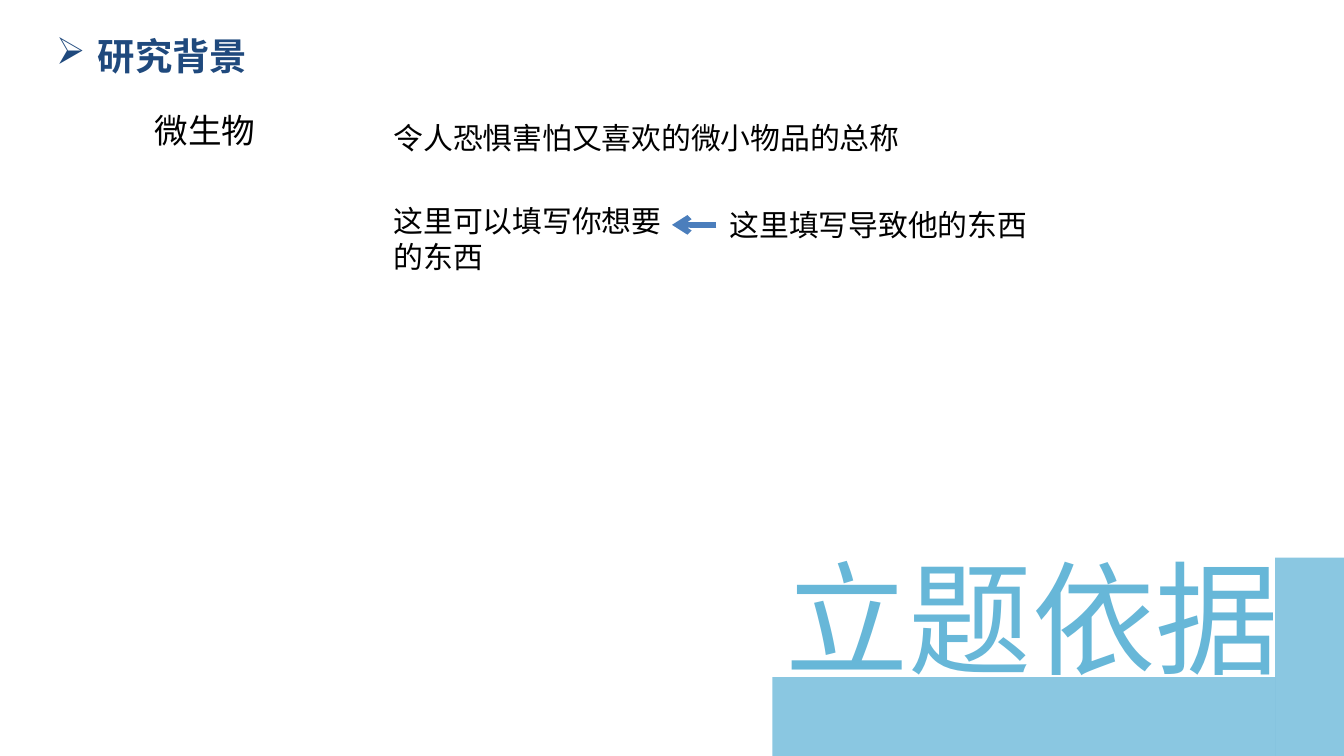
"""Build the research background slide with its corner title."""
from lxml import etree
from pptx import Presentation
from pptx.dml.color import RGBColor
from pptx.enum.shapes import MSO_CONNECTOR, MSO_SHAPE
from pptx.enum.text import MSO_AUTO_SIZE
from pptx.oxml.ns import qn
from pptx.util import Cm, Pt

RECTANGLE = MSO_SHAPE.RECTANGLE
STRAIGHT = MSO_CONNECTOR.STRAIGHT
GROW = MSO_AUTO_SIZE.SHAPE_TO_FIT_TEXT

SKY = RGBColor(0x67, 0xB7, 0xD8)
NAVY = RGBColor(0x1F, 0x49, 0x7D)
BLUE = RGBColor(0x4B, 0x7E, 0xBC)
BLACK = RGBColor(0, 0, 0)
FONT = "Noto Sans CJK SC"

WIDTH, HEIGHT = 25.4, 14.29
BAND_LEFT, BAND_TOP = 14.6, 12.8
COLUMN_LEFT, COLUMN_TOP, COLUMN_WIDTH = 24.1, 10.54, 3.4
BANDS_BOTTOM = 14.35
DETAIL_LEFT, CAUSE_LEFT = 7.19, 13.54
CAUSE_TOP, LINE_HEIGHT = 3.78, 0.94
ARROW_LENGTH = 0.84

BANDS = [
    (COLUMN_LEFT, COLUMN_TOP, COLUMN_WIDTH),
    (BAND_LEFT, BAND_TOP, COLUMN_LEFT - BAND_LEFT),
]
TEXTS = [
    ("立题依据", (BAND_LEFT, 10.13, 11.4, 3.05), dict(size=66, color=SKY)),
    ("研究背景", (0.81, 0.51, 6.4, 1.09),
     dict(size=20, color=NAVY, bold=True, bullet="➢")),
    ("令人恐惧害怕又喜欢的微小物品的总称",
     (DETAIL_LEFT, 2.13, 16.2, LINE_HEIGHT), {}),
    ("微生物", (2.67, 1.96, 2.41, 1.02), dict(size=18, wrap=False)),
    ("这里可以填写你想要的东西", (DETAIL_LEFT, 3.71, 5.92, 1.6), {}),
    ("这里填写导致他的东西",
     (CAUSE_LEFT, CAUSE_TOP, 6.15, LINE_HEIGHT), dict(wrap=False)),
]


def add_child(parent, tag, **attributes):
    return etree.SubElement(parent, qn(tag), attributes)


def add_text(slide, text, box, size=16, color=BLACK, bold=False, wrap=True, bullet=None):
    frame = slide.shapes.add_textbox(*map(Cm, box)).text_frame
    frame.word_wrap = wrap
    frame.auto_size = GROW
    paragraph = frame.paragraphs[0]
    if bullet:
        properties = paragraph._p.get_or_add_pPr()
        properties.set("marL", str(Cm(0.79)))
        properties.set("indent", str(Cm(-0.79)))
        add_child(properties, "a:buChar", char=bullet)
    run = paragraph.add_run()
    run.text = text
    run.font.size = Pt(size)
    run.font.bold = bold
    run.font.color.rgb = color
    run.font.name = FONT
    add_child(run._r.get_or_add_rPr(), "a:ea", typeface=FONT)


def add_band(slide, left, top, width):
    box = (left, top, width, BANDS_BOTTOM - top)
    band = slide.shapes.add_shape(RECTANGLE, *map(Cm, box))
    band.shadow.inherit = False
    band.fill.solid()
    band.fill.fore_color.rgb = SKY
    band.line.fill.background()
    tint = band._element.spPr.find(".//" + qn("a:srgbClr"))
    add_child(tint, "a:alpha", val="77000")


def add_arrow(slide):
    middle = CAUSE_TOP + LINE_HEIGHT / 2
    ends = (CAUSE_LEFT, middle, CAUSE_LEFT - ARROW_LENGTH, middle)
    arrow = slide.shapes.add_connector(STRAIGHT, *map(Cm, ends))
    arrow.line.color.rgb = BLUE
    arrow.line.width = Pt(3)
    add_child(arrow.line._get_or_add_ln(), "a:tailEnd", type="arrow")
    add_child(arrow._element.spPr, "a:effectLst")


def main():
    deck = Presentation()
    deck.slide_width, deck.slide_height = Cm(WIDTH), Cm(HEIGHT)
    slide = deck.slides.add_slide(deck.slide_layouts[6])
    for band in BANDS:
        add_band(slide, *band)
    for text, box, style in TEXTS:
        add_text(slide, text, box, **style)
    add_arrow(slide)
    deck.save("out.pptx")


if __name__ == "__main__":
    main()
